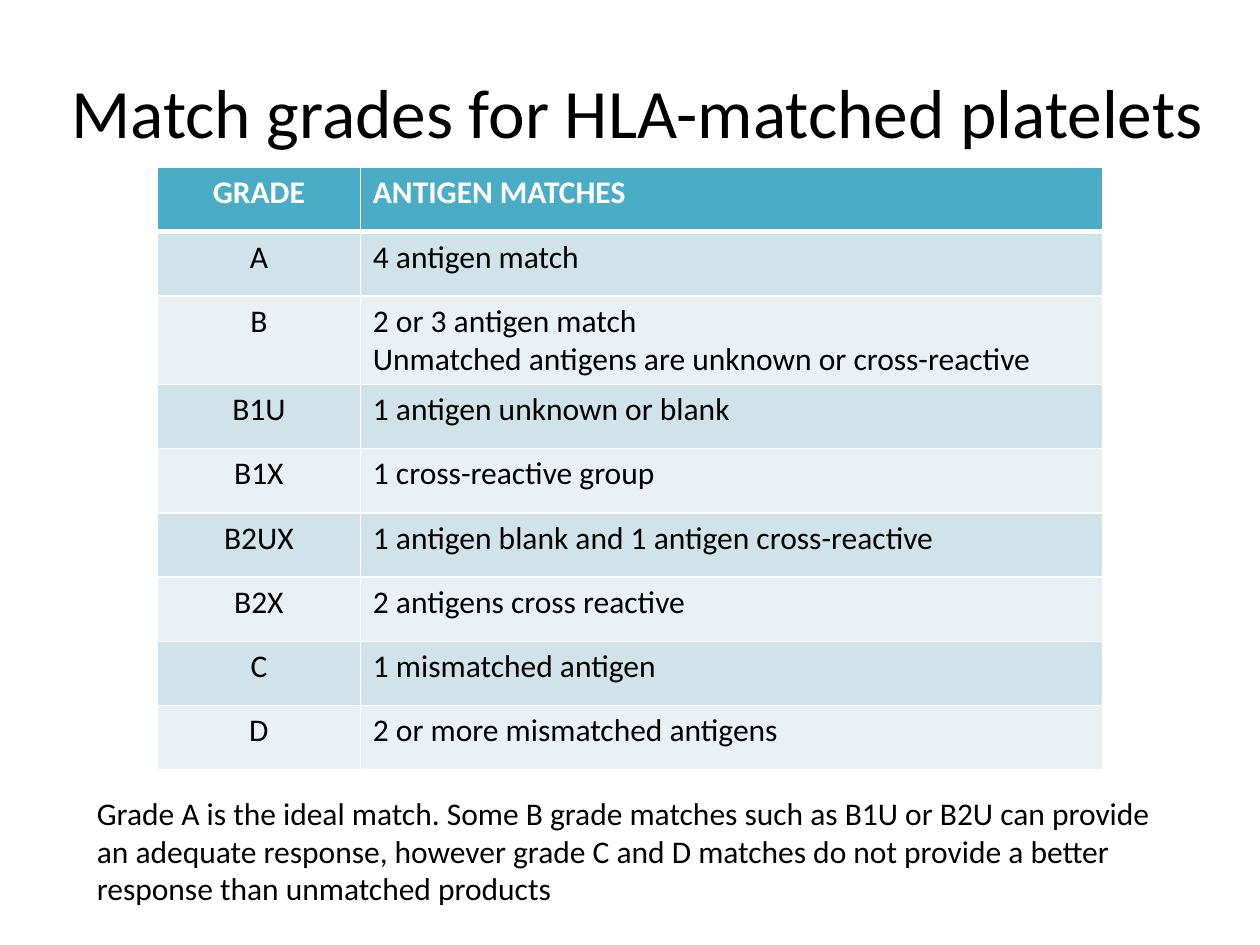
from pptx import Presentation
from pptx.dml.color import RGBColor
from pptx.enum.text import MSO_ANCHOR, MSO_AUTO_SIZE, PP_ALIGN
from pptx.oxml import parse_xml
from pptx.oxml.ns import nsdecls
from pptx.util import Inches, Pt

FONT = "Calibri"
BLACK, WHITE = "000000", "FFFFFF"
HEADER_FILL = "4BACC6"
BAND_FILLS = ("D0E3EA", "E9F1F5")
COLUMN_WIDTHS = (1.61, 5.89)
ROW_HEIGHT = 0.51
GRADES = [
    ("GRADE", ["ANTIGEN MATCHES"]),
    ("A", ["4 antigen match"]),
    ("B", ["2 or 3 antigen match", "Unmatched antigens are unknown or cross-reactive"]),
    ("B1U", ["1 antigen unknown or blank"]),
    ("B1X", ["1 cross-reactive group"]),
    ("B2UX", ["1 antigen blank and 1 antigen cross-reactive"]),
    ("B2X", ["2 antigens cross reactive"]),
    ("C", ["1 mismatched antigen"]),
    ("D", ["2 or more mismatched antigens"]),
]


def color(value):
    return RGBColor.from_string(value)


def write_lines(text_frame, lines, size=18, fill=BLACK, bold=False, align=PP_ALIGN.LEFT):
    for index, line in enumerate(lines):
        paragraph = text_frame.add_paragraph() if index else text_frame.paragraphs[0]
        paragraph.alignment = align
        run = paragraph.add_run()
        run.text = line
        run.font.name = FONT
        run.font.size = Pt(size)
        run.font.bold = bold
        run.font.color.rgb = color(fill)


def set_borders(cell, bottom_width):
    properties = cell._tc.get_or_add_tcPr()
    widths = {"lnL": 1, "lnR": 1, "lnT": 1, "lnB": bottom_width}
    for position, (side, width) in enumerate(widths.items()):
        border = parse_xml(
            f'<a:{side} {nsdecls("a")} w="{Pt(width)}"><a:solidFill>'
            f'<a:srgbClr val="{WHITE}"/></a:solidFill></a:{side}>'
        )
        properties.insert(position, border)


def add_text(slide, box, text, anchor=MSO_ANCHOR.TOP, **style):
    shape = slide.shapes.add_textbox(*map(Inches, box))
    text_frame = shape.text_frame
    text_frame.word_wrap = True
    text_frame.vertical_anchor = anchor
    write_lines(text_frame, [text], **style)
    return shape


def add_title(slide, box):
    add_text(slide, box, "Match grades for HLA-matched platelets ",
             anchor=MSO_ANCHOR.MIDDLE, size=39.6, align=PP_ALIGN.CENTER)


def add_grade_table(slide, left, top):
    frame = slide.shapes.add_table(
        len(GRADES), len(COLUMN_WIDTHS), Inches(left), Inches(top),
        Inches(sum(COLUMN_WIDTHS)), Inches(ROW_HEIGHT * len(GRADES)))
    table = frame.table
    for column, width in zip(table.columns, COLUMN_WIDTHS):
        column.width = Inches(width)
    for row_index, (grade, matches) in enumerate(GRADES):
        table.rows[row_index].height = Inches(ROW_HEIGHT)
        header = row_index == 0
        fill = HEADER_FILL if header else BAND_FILLS[(row_index - 1) % 2]
        contents = (([grade], PP_ALIGN.CENTER), (matches, PP_ALIGN.LEFT))
        for column_index, (lines, align) in enumerate(contents):
            cell = table.cell(row_index, column_index)
            cell.fill.solid()
            cell.fill.fore_color.rgb = color(fill)
            set_borders(cell, 3 if header else 1)
            write_lines(cell.text_frame, lines, fill=WHITE if header else BLACK,
                        bold=header, align=align)


def add_summary(slide, box):
    shape = add_text(
        slide, box,
        "Grade A is the ideal match. Some B grade matches such as B1U or B2U can provide "
        "an adequate response, however grade C and D matches do not provide a better "
        "response than unmatched products")
    shape.text_frame.auto_size = MSO_AUTO_SIZE.SHAPE_TO_FIT_TEXT


def main():
    presentation = Presentation()
    presentation.slide_width = Inches(10)
    presentation.slide_height = Inches(7.5)
    slide = presentation.slides.add_slide(presentation.slide_layouts[6])
    add_title(slide, (0.08, 0.25, 10.08, 1.25))
    add_grade_table(slide, 1.25, 1.33)
    add_summary(slide, (0.67, 6.25, 8.75, 1.01))
    presentation.save("out.pptx")


if __name__ == "__main__":
    main()
